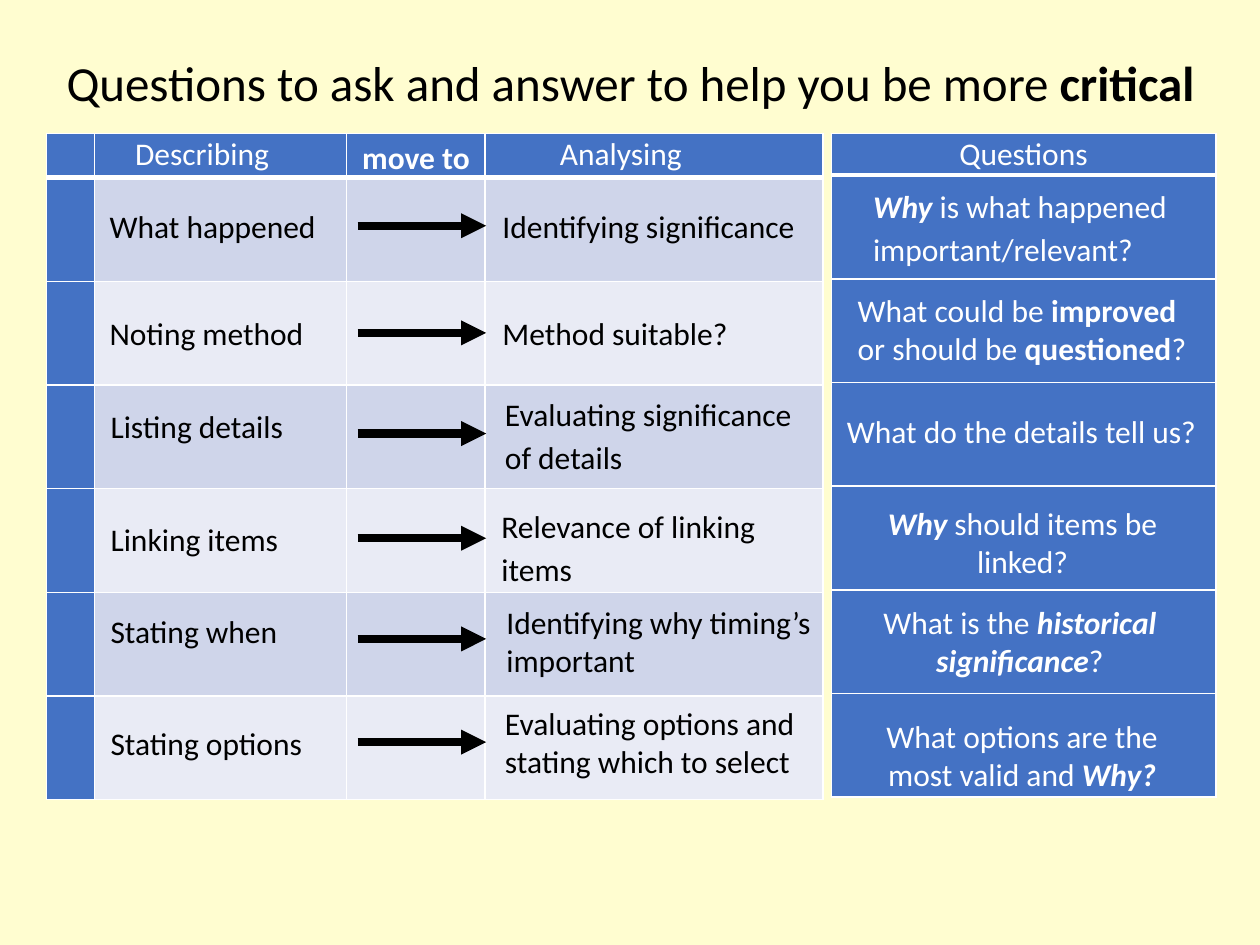
import dataclasses

import lxml.etree
import pptx
import pptx.dml.color
import pptx.enum.shapes
import pptx.enum.text
import pptx.oxml.ns
import pptx.util

Cm = pptx.util.Cm
Pt = pptx.util.Pt
qn = pptx.oxml.ns.qn
LEFT = pptx.enum.text.PP_ALIGN.LEFT
MID = pptx.enum.text.PP_ALIGN.CENTER


@dataclasses.dataclass(frozen=True)
class Theme:
    font: str = "Calibri"
    title: int = 28
    body: int = 18
    page: str = "FFFDD0"
    blue: str = "4472C4"
    bands: tuple = ("CFD5EA", "E9EBF5")
    white: str = "FFFFFF"
    black: str = "000000"


THEME = Theme()
LOOSE = 1.15
TOP = 2.69
ROWS = [0.84] + [2.09] * 6
COLS = [0.97, 5.08, 2.79, 6.81]

# Left, top, width, wording, line spacing
HEADS = [(2.41, "Describing"), (10.85, "Analysing"), (18.97, "Questions")]
TASKS = [
    (1.96, 4.04, 5.26, "What happened", None),
    (1.96, 6.1, 4.45, "Noting method", LOOSE),
    (1.98, 8.08, 4.06, "Listing details", None),
    (1.98, 10.24, 3.94, "Linking items", LOOSE),
    (1.98, 12.22, 4.19, "Stating when", None),
    (1.98, 14.48, 4.45, "Stating options", None),
    (9.88, 4.04, 6.65, "Identifying significance", None),
    (9.88, 6.1, 5.23, "Method suitable?", LOOSE),
    (9.93, 7.72, 6.55, "Evaluating significance of details", LOOSE),
    (9.86, 9.98, 7.01, "Relevance of linking items", LOOSE),
    (9.96, 12.04, 7.01, "Identifying why timing’s important", None),
    (9.93, 14.07, 6.55, "Evaluating options and stating which to select", None),
]
# Left, top, width, runs with style letters, line spacing, alignment
ASKS = [
    (17.35, 3.53, 6.55,
     [("Why ", "bi"), ("is what happened important/relevant?", "")], LOOSE, LEFT),
    (17.04, 5.74, 7.49,
     [("What could be ", ""), ("improved ", "b"), ("or should be ", ""),
      ("questioned", "b"), ("?", "")], None, LEFT),
    (16.76, 8.18, 7.67, [("What do the details tell us?", "")], None, MID),
    (17.53, 10.03, 6.17,
     [("Why", "bi"), (" should items be linked?", "")], None, MID),
    (17.45, 12.04, 6.22,
     [("What is the ", ""), ("historical significance", "bi"), ("?", "")], None, MID),
    (16.92, 14.33, 7.37,
     [("What options are the most valid and ", ""), ("Why?", "bi")], None, MID),
]
ARROWS = [4.55, 6.71, 8.74, 10.85, 12.88, 14.96]


def rgb(code):
    return pptx.dml.color.RGBColor.from_string(code)


def write(frame, runs, color, size=THEME.body, align=LEFT, space=None):
    """Fill the first paragraph with (text, style letters) runs."""
    para = frame.paragraphs[0]
    para.alignment = align
    if space:
        para.line_spacing = space
    if space == LOOSE:
        para.space_after = Pt(10)
    for text, style in runs:
        run = para.add_run()
        run.text = text
        font = run.font
        font.name, font.size = THEME.font, Pt(size)
        font.bold, font.italic = "b" in style, "i" in style
        font.color.rgb = rgb(color)


def add_text(slide, left, top, width, runs, color, space=None, align=LEFT):
    box = slide.shapes.add_textbox(Cm(left), Cm(top), Cm(width), Cm(1.02))
    frame = box.text_frame
    frame.word_wrap = True
    frame.auto_size = pptx.enum.text.MSO_AUTO_SIZE.SHAPE_TO_FIT_TEXT
    write(frame, runs, color, align=align, space=space)


def edge(cell, side, width):
    line = lxml.etree.SubElement(cell._tc.get_or_add_tcPr(), qn("a:ln" + side))
    line.set("w", str(Pt(width)))
    fill = lxml.etree.SubElement(line, qn("a:solidFill"))
    lxml.etree.SubElement(fill, qn("a:srgbClr")).set("val", THEME.white)


def add_grid(slide, left, cols, solid):
    """Add a table whose header and first `solid` columns are blue."""
    frame = slide.shapes.add_table(len(ROWS), len(cols), Cm(left), Cm(TOP),
                                   Cm(sum(cols)), Cm(sum(ROWS)))
    table = frame.table
    for col, width in zip(table.columns, cols):
        col.width = Cm(width)
    for r, high in enumerate(ROWS):
        table.rows[r].height = Cm(high)
        for c in range(len(cols)):
            cell = table.cell(r, c)
            cell.margin_left = cell.margin_right = Cm(0.18)
            cell.margin_top = cell.margin_bottom = 0
            cell.vertical_anchor = pptx.enum.text.MSO_ANCHOR.MIDDLE
            for side in "LRTB":
                thick = (r, side) in ((0, "B"), (1, "T"))
                edge(cell, side, 3 if thick else 1)
            blue = r == 0 or c < solid
            cell.fill.solid()
            cell.fill.fore_color.rgb = rgb(
                THEME.blue if blue else THEME.bands[(r - 1) % 2])
    return table


def add_arrow(slide, top):
    kind = pptx.enum.shapes.MSO_CONNECTOR.STRAIGHT
    arrow = slide.shapes.add_connector(kind, Cm(7.21), Cm(top), Cm(9.8), Cm(top))
    arrow.line.color.rgb = rgb(THEME.black)
    arrow.line.width = Pt(4.75)
    props = arrow._element.spPr
    head = lxml.etree.SubElement(props.find(qn("a:ln")), qn("a:tailEnd"))
    head.set("type", "triangle")
    lxml.etree.SubElement(props, qn("a:effectLst"))


def set_title(slide):
    title = slide.shapes.title
    title.left, title.top = Cm(0.71), Cm(0.53)
    title.width, title.height = Cm(24), Cm(2.39)
    title.text_frame.vertical_anchor = pptx.enum.text.MSO_ANCHOR.MIDDLE
    runs = [("Questions to ask and answer to help you be more ", ""),
            ("critical", "b")]
    write(title.text_frame, runs, THEME.black, THEME.title, MID, 0.9)


def main():
    deck = pptx.Presentation()
    deck.slide_width, deck.slide_height = Cm(25.4), Cm(19.05)
    slide = deck.slides.add_slide(deck.slide_layouts[5])
    slide.background.fill.solid()
    slide.background.fill.fore_color.rgb = rgb(THEME.page)
    set_title(slide)

    table = add_grid(slide, 0.94, COLS, 1)
    write(table.cell(0, 2).text_frame, [("move to", "b")], THEME.white,
          align=MID, space=LOOSE)
    add_grid(slide, 16.76, [7.75], 1)

    for left, text in HEADS:
        add_text(slide, left, 2.57, 3.33, [(text, "")], THEME.white, align=MID)
    for left, top, width, text, space in TASKS:
        add_text(slide, left, top, width, [(text, "")], THEME.black, space)
    for left, top, width, runs, space, align in ASKS:
        add_text(slide, left, top, width, runs, THEME.white, space, align)
    for top in ARROWS:
        add_arrow(slide, top)
    deck.save("out.pptx")


if __name__ == "__main__":
    main()
